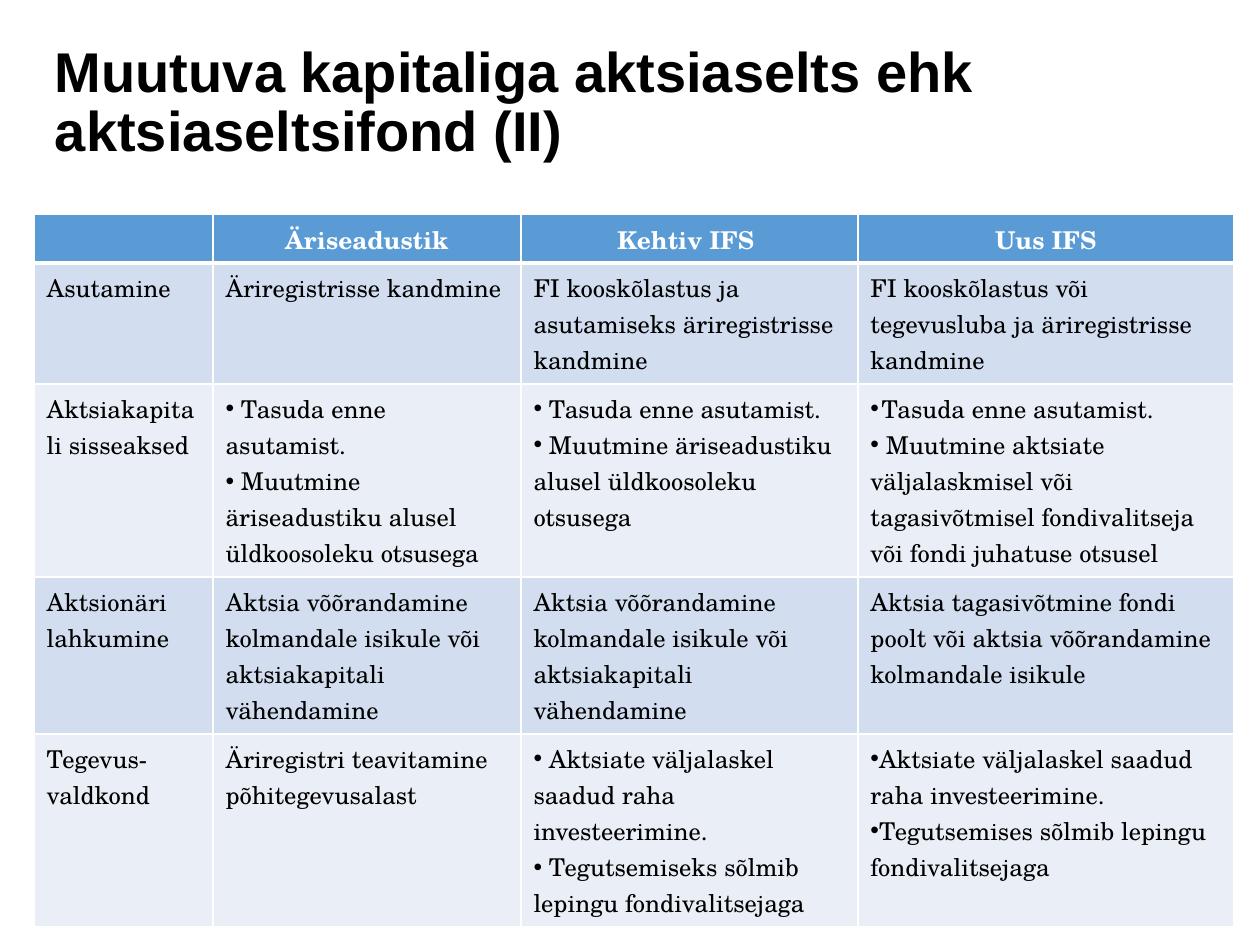
from dataclasses import dataclass

from lxml import etree
from pptx import Presentation
from pptx import util as u
from pptx.dml.color import RGBColor
from pptx.enum import text
from pptx.oxml import ns

PX = u.Inches(1) / 126
COLORS = {"ink": "000000", "white": "FFFFFF", "header": "5B9BD5",
          "odd": "D2DEEF", "even": "EAEFF7"}
COLUMN_WIDTHS = (179, 308, 337, 376)
ROW_HEIGHTS = (49, 121, 193, 157, 193)


@dataclass(frozen=True)
class Bullet:
    text: str
    hang: int = 0
    tab: int = 0


DISPOSAL = "Aktsia võõrandamine kolmandale isikule või aktsiakapitali vähendamine"
BY_MEETING = (Bullet(" Tasuda enne asutamist."),
              Bullet(" Muutmine äriseadustiku alusel üldkoosoleku otsusega"))
ROWS = (
    ("", "Äriseadustik", "Kehtiv IFS ", "Uus IFS"),
    ("Asutamine", "Äriregistrisse kandmine",
     "FI kooskõlastus ja asutamiseks äriregistrisse kandmine",
     "FI kooskõlastus või tegevusluba ja äriregistrisse kandmine"),
    ("Aktsiakapitali sisseaksed", BY_MEETING, BY_MEETING,
     (Bullet("Tasuda enne asutamist.", hang=11, tab=11),
      Bullet(" Muutmine aktsiate väljalaskmisel või tagasivõtmisel "
             "fondivalitseja või fondi juhatuse otsusel", tab=50))),
    ("Aktsionäri lahkumine", DISPOSAL, DISPOSAL,
     "Aktsia tagasivõtmine fondi poolt või aktsia võõrandamine kolmandale isikule"),
    ("Tegevus-valdkond", "Äriregistri teavitamine põhitegevusalast",
     (Bullet(" Aktsiate väljalaskel saadud raha investeerimine."),
      Bullet(" Tegutsemiseks sõlmib lepingu fondivalitsejaga")),
     (Bullet("Aktsiate väljalaskel saadud raha investeerimine."),
      Bullet("Tegutsemises sõlmib lepingu fondivalitsejaga"))),
)


def px(length: int) -> u.Emu:
    return u.Emu(round(length * PX))


def rgb(name: str) -> RGBColor:
    return RGBColor.from_string(COLORS[name])


def add_span(para, words: str, color: str, **formats) -> None:
    span = para.add_run()
    span.text = words
    for name, value in formats.items():
        setattr(span.font, name, value)
    span.font.color.rgb = rgb(color)


def add_bullet(para, bullet: Bullet) -> None:
    props = para._p.get_or_add_pPr()
    props.set("marL", str(px(bullet.hang)))
    props.set("indent", str(-px(bullet.hang)))
    etree.SubElement(props, ns.qn("a:buFont"), typeface="Arial")
    etree.SubElement(props, ns.qn("a:buChar"), char="•")
    if bullet.tab:
        tabs = etree.SubElement(props, ns.qn("a:tabLst"))
        etree.SubElement(tabs, ns.qn("a:tab"), pos=str(px(bullet.tab)), algn="l")


def set_borders(cell, widths: dict[str, int]) -> None:
    """Draw white cell borders, with widths in points keyed by side."""
    props = cell._tc.get_or_add_tcPr()
    for place, (side, width) in enumerate(widths.items()):
        line = etree.Element(ns.qn(f"a:ln{side}"), w=str(u.Pt(width)))
        fill = etree.SubElement(line, ns.qn("a:solidFill"))
        etree.SubElement(fill, ns.qn("a:srgbClr"), val=COLORS["white"])
        props.insert(place, line)


def fill_cell(cell, content: str | tuple[Bullet, ...], row: int) -> None:
    header = row == 0
    cell.fill.solid()
    cell.fill.fore_color.rgb = rgb("header" if header else "odd" if row % 2 else "even")
    set_borders(cell, {"L": 1, "R": 1, "T": 3 if row == 1 else 1, "B": 3 if header else 1})
    items = (content,) if isinstance(content, str) else content
    for index, item in enumerate(items):
        frame = cell.text_frame
        para = frame.add_paragraph() if index else frame.paragraphs[0]
        if header:
            para.alignment = text.PP_ALIGN.CENTER
        words = item
        if isinstance(item, Bullet):
            add_bullet(para, item)
            words = item.text
        if words:
            add_span(para, words, "white" if header else "ink",
                     name="TeX Gyre Schola", size=u.Pt(14), bold=header)
        else:
            para.font.size = u.Pt(14)


def add_title(page, words: str) -> None:
    box = page.shapes.add_textbox(px(55), px(38), px(1160), px(156))
    formats = {"word_wrap": True, "vertical_anchor": text.MSO_ANCHOR.TOP,
               "margin_left": 0, "margin_top": px(7),
               "margin_right": 0, "margin_bottom": 0}
    for name, value in formats.items():
        setattr(box.text_frame, name, value)
    para = box.text_frame.paragraphs[0]
    para.line_spacing = 0.88
    add_span(para, words, "ink", name="Arial", size=u.Pt(32), bold=True)


def add_comparison(page) -> None:
    table = page.shapes.add_table(
        len(ROWS), len(COLUMN_WIDTHS), px(34), px(214),
        px(sum(COLUMN_WIDTHS)), px(sum(ROW_HEIGHTS))).table
    for column, width in zip(table.columns, COLUMN_WIDTHS):
        column.width = px(width)
    for row, (height, contents) in enumerate(zip(ROW_HEIGHTS, ROWS)):
        table.rows[row].height = px(height)
        for column, content in enumerate(contents):
            fill_cell(table.cell(row, column), content, row)


def main() -> None:
    deck = Presentation()
    deck.slide_width, deck.slide_height = px(1260), px(945)
    page = deck.slides.add_slide(deck.slide_layouts[6])
    add_title(page, "Muutuva kapitaliga aktsiaselts ehk aktsiaseltsifond (II)")
    add_comparison(page)
    deck.save("out.pptx")


if __name__ == "__main__":
    main()
